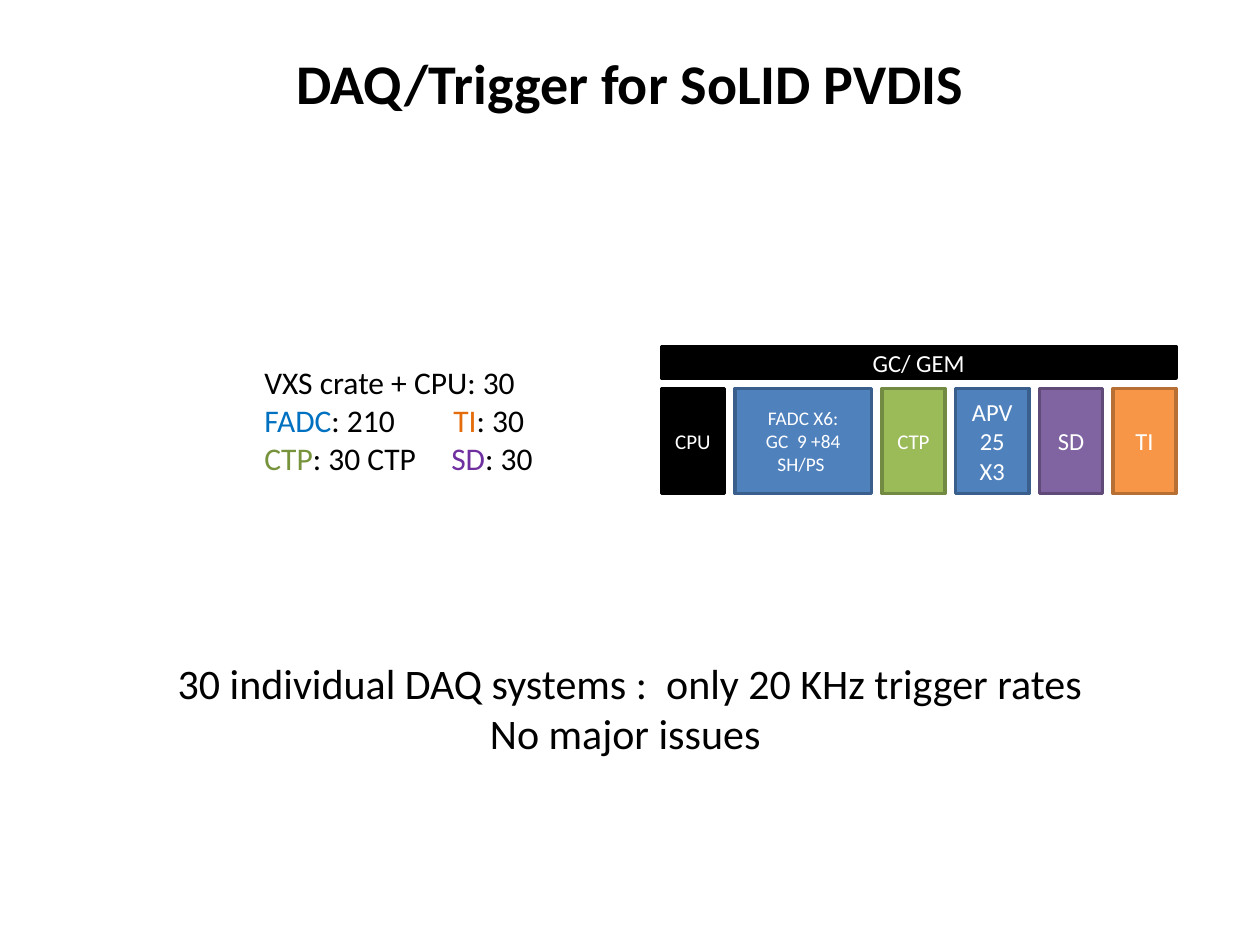
from pptx import Presentation
from pptx.dml.color import RGBColor
from pptx.enum.shapes import MSO_SHAPE as Shape
from pptx.enum.text import MSO_ANCHOR as Anchor, MSO_AUTO_SIZE as AutoSize, PP_ALIGN as Align
from pptx.util import Emu, Pt
from lxml.etree import SubElement
from pptx.oxml.ns import qn

# Theme: name -> fill and outline colours, text colours, sizes in points
THEME = {
    "font": "Calibri",
    "line": 2,
    "fills": {
        "black": ("000000", "000000"), "blue": ("4F81BD", "3A5F8C"),
        "green": ("9BBB59", "738A42"), "purple": ("8064A2", "5F4A78"),
        "orange": ("F79646", "B76F34"),
    },
    "text": {
        "black": "000000", "white": "FFFFFF", "blue": "0070C0",
        "green": "77933C", "purple": "7030A0", "orange": "E46C0A",
    },
    "sizes": {"title": 32, "summary": 24, "count": 18, "module": 14, "small": 12, "tiny": 11},
}

# Content: paragraphs are lists of (text, colour) runs
TITLE = [[("DAQ/Trigger for SoLID PVDIS", "black")]]
COUNTS = [
    [("VXS crate + CPU: 30", "black")],
    [("FADC", "blue"), (": 210", "black")],
    [("CTP", "green"), (": 30 CTP\t", "black"), ("SD", "purple"), (": 30", "black")],
]
TI_COUNT = [[("TI", "orange"), (": 30", "black")]]
SUMMARY = [
    [("30 individual DAQ systems :  only 20 KHz trigger rates", "black")],
    [("No major issues ", "black")],
]
# Crate modules from left to right: lines, width, fill, text size
MODULES = [
    (["CPU"], 60, "black", "small"),
    (["FADC X6:", "GC  9 +84 SH/PS "], 130, "blue", "tiny"),
    (["CTP"], 60, "green", "small"),
    (["APV25 X3"], 70, "blue", "module"),
    (["SD"], 60, "purple", "module"),
    (["TI"], 60, "orange", "module"),
]

# Layout in px, 120 to the inch
CRATE_LEFT, CRATE_TOP, GAP = 630, 330, 10
BAR_HEIGHT, MODULE_HEIGHT = 30, 100
SD_TAB = 178


def px(value):
    return Emu(value * 7620)


def write(shape, paragraphs, size, align=Align.LEFT, anchor=Anchor.TOP, bold=False):
    frame = shape.text_frame
    frame.word_wrap = True
    frame.vertical_anchor = anchor
    for index, runs in enumerate(paragraphs):
        paragraph = frame.add_paragraph() if index else frame.paragraphs[0]
        paragraph.alignment = align
        for text, color in runs:
            run = paragraph.add_run()
            run.text = text
            run.font.name = THEME["font"]
            run.font.size = Pt(THEME["sizes"][size])
            run.font.bold = bold
            run.font.color.rgb = RGBColor.from_string(THEME["text"][color])
    return frame


def add_text(slide, box, paragraphs, size, align=Align.LEFT):
    shape = slide.shapes.add_textbox(*map(px, box))
    frame = write(shape, paragraphs, size, align)
    frame.auto_size = AutoSize.SHAPE_TO_FIT_TEXT
    return frame


def add_block(slide, box, lines, color, size):
    shape = slide.shapes.add_shape(Shape.RECTANGLE, *map(px, box))
    fill, line = THEME["fills"][color]
    shape.shadow.inherit = False
    shape.fill.solid()
    shape.fill.fore_color.rgb = RGBColor.from_string(fill)
    shape.line.color.rgb = RGBColor.from_string(line)
    shape.line.width = Pt(THEME["line"])
    write(shape, [[(text, "white")] for text in lines], size, Align.CENTER, Anchor.MIDDLE)


def add_tab(paragraph, position):
    tabs = SubElement(paragraph._p.get_or_add_pPr(), qn("a:tabLst"))
    SubElement(tabs, qn("a:tab"), pos=str(px(position)), algn="l")


def main():
    presentation = Presentation()
    presentation.slide_width, presentation.slide_height = px(1200), px(900)
    slide = presentation.slides.add_slide(presentation.slide_layouts[5])

    # Title
    title = slide.shapes.title
    title.left, title.top, title.width, title.height = map(px, (270, 40, 665, 77))
    frame = write(title, TITLE, "title", bold=True)
    frame.word_wrap = False
    frame.auto_size = AutoSize.SHAPE_TO_FIT_TEXT

    # Module counts
    counts = add_text(slide, (240, 340, 360, 121), COUNTS, "count")
    add_tab(counts.paragraphs[-1], SD_TAB)
    add_text(slide, (420, 376, 145, 48), TI_COUNT, "count")

    # Crate: a bar across the top, then one block for each module
    crate_width = sum(module[1] for module in MODULES) + GAP * (len(MODULES) - 1)
    add_block(slide, (CRATE_LEFT, CRATE_TOP, crate_width, BAR_HEIGHT), ["GC/ GEM"], "black", "module")
    left = CRATE_LEFT
    for lines, width, color, size in MODULES:
        box = (left, CRATE_TOP + BAR_HEIGHT + GAP, width, MODULE_HEIGHT)
        add_block(slide, box, lines, color, size)
        left += width + GAP

    # Summary
    add_text(slide, (150, 620, 900, 109), SUMMARY, "summary", Align.CENTER)

    presentation.save("out.pptx")


if __name__ == "__main__":
    main()
